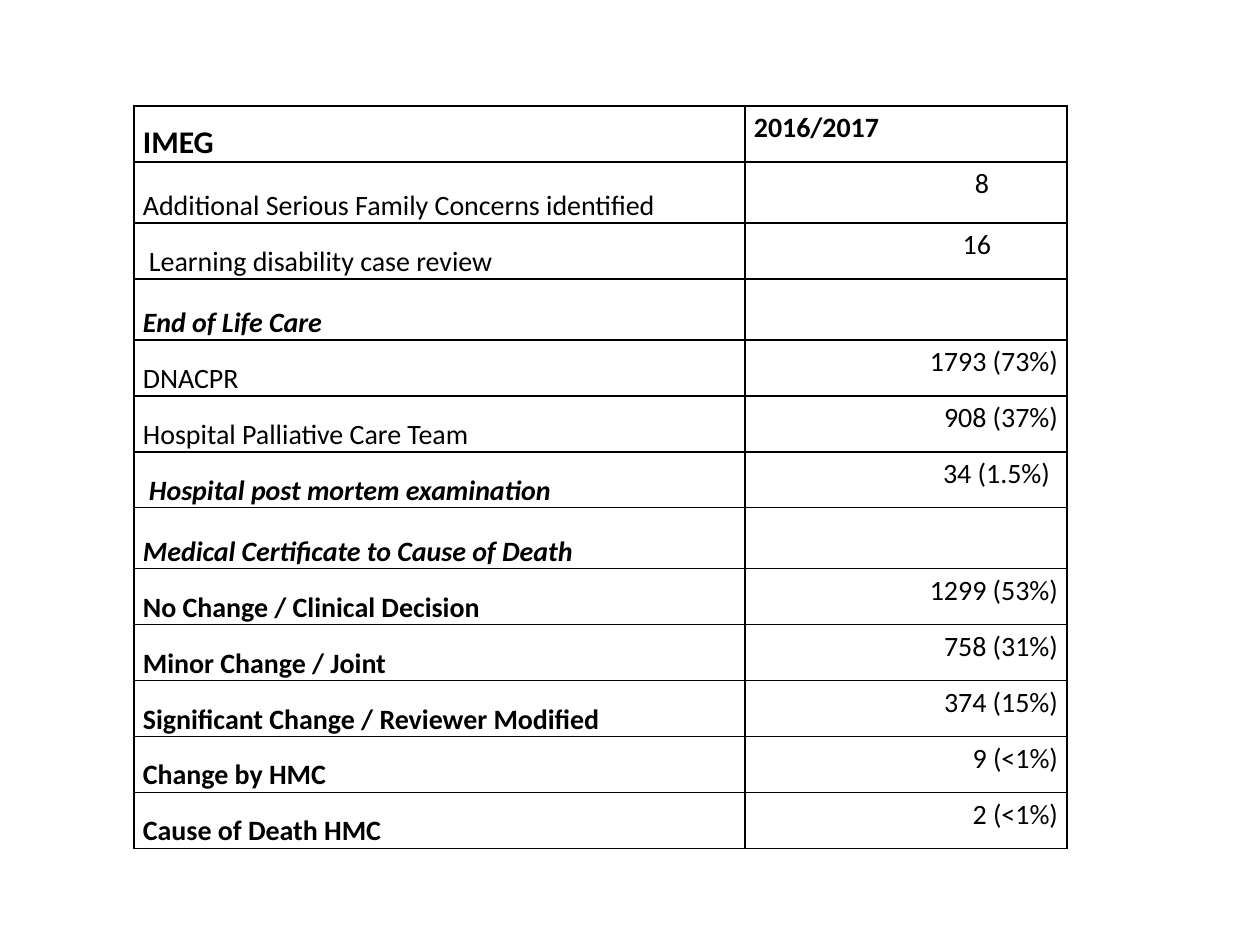
from lxml import etree
from pptx import Presentation
from pptx.dml.color import RGBColor
from pptx.enum.text import MSO_ANCHOR, PP_ALIGN
from pptx.oxml.ns import qn
from pptx.util import Pt

LEFT, RIGHT = PP_ALIGN.LEFT, PP_ALIGN.RIGHT
TOP, BOTTOM = MSO_ANCHOR.TOP, MSO_ANCHOR.BOTTOM
COLORS = {"text": "000000", "border": "000000", "cell": "FFFFFF"}
FONT = "Calibri"
PX = 914400 / 126
SIDE_INSET = 9
ROW_HEIGHT, TALL_ROW_HEIGHT = 56, 61
COLUMN_WIDTHS = (611, 322)

PLAIN = {}
BOLD = {"bold": True}
SECTION = {"bold": True, "italic": True}
ROWS = [
    ("IMEG", {"bold": True, "size": 18}, "2016/2017", {"bold": True, "align": LEFT}),
    ("Additional Serious Family Concerns identified", PLAIN, "8", {"indent": 69}),
    ("Learning disability case review", {"indent": 6}, "16", {"indent": 67}),
    ("End of Life Care", SECTION, "", PLAIN),
    ("DNACPR", PLAIN, "1793 (73%)", PLAIN),
    ("Hospital Palliative Care Team", PLAIN, "908 (37%)", PLAIN),
    ("Hospital post mortem examination", {**SECTION, "indent": 6}, "34 (1.5%)", {"indent": 8}),
    ("Medical Certificate to Cause of Death", SECTION, "", PLAIN),
    ("No Change / Clinical Decision", BOLD, "1299 (53%)", PLAIN),
    ("Minor Change / Joint", BOLD, "758 (31%)", PLAIN),
    ("Significant Change / Reviewer Modified", BOLD, "374 (15%)", PLAIN),
    ("Change by HMC", BOLD, "9 (<1%)", PLAIN),
    ("Cause of Death HMC", BOLD, "2 (<1%)", PLAIN),
]
TALL_ROWS = {1, 3, 7}


def emu(px):
    return round(px * PX)


def color(name):
    return RGBColor.from_string(COLORS[name])


def set_borders(cell, width=1):
    properties = cell._tc.get_or_add_tcPr()
    for index, side in enumerate(("a:lnL", "a:lnR", "a:lnT", "a:lnB")):
        line = etree.Element(qn(side), w=str(Pt(width)))
        fill = etree.SubElement(line, qn("a:solidFill"))
        etree.SubElement(fill, qn("a:srgbClr"), val=COLORS["border"])
        properties.insert(index, line)


def write_text(cell, text, size=16, bold=False, italic=False, align=LEFT, anchor=TOP, indent=0):
    cell.vertical_anchor = anchor
    cell.margin_top = cell.margin_bottom = 0
    cell.margin_left = emu(SIDE_INSET + (indent if align == LEFT else 0))
    cell.margin_right = emu(SIDE_INSET + (indent if align == RIGHT else 0))
    if not text:
        return
    para = cell.text_frame.paragraphs[0]
    para.alignment = align
    para.line_spacing = 1.15
    span = para.add_run()
    span.text = text
    span.font.name = FONT
    span.font.size = Pt(size)
    span.font.bold = bold
    span.font.italic = italic
    span.font.color.rgb = color("text")


def add_review_table(page, left, top):
    heights = [TALL_ROW_HEIGHT if index in TALL_ROWS else ROW_HEIGHT for index in range(len(ROWS))]
    frame = page.shapes.add_table(
        len(ROWS), len(COLUMN_WIDTHS), emu(left), emu(top), emu(sum(COLUMN_WIDTHS)), emu(sum(heights))
    )
    table = frame.table
    for column, width in zip(table.columns, COLUMN_WIDTHS):
        column.width = emu(width)
    for row, height, (label, label_format, value, value_format) in zip(table.rows, heights, ROWS):
        row.height = emu(height)
        label_cell, value_cell = row.cells
        write_text(label_cell, label, **{"anchor": BOTTOM, **label_format})
        write_text(value_cell, value, **{"align": RIGHT, **value_format})
    for cell in table.iter_cells():
        cell.fill.solid()
        cell.fill.fore_color.rgb = color("cell")
        set_borders(cell)


def main():
    deck = Presentation()
    deck.slide_width, deck.slide_height = emu(1260), emu(945)
    page = deck.slides.add_slide(deck.slide_layouts[6])
    add_review_table(page, 134, 106)
    deck.save("out.pptx")


if __name__ == "__main__":
    main()
